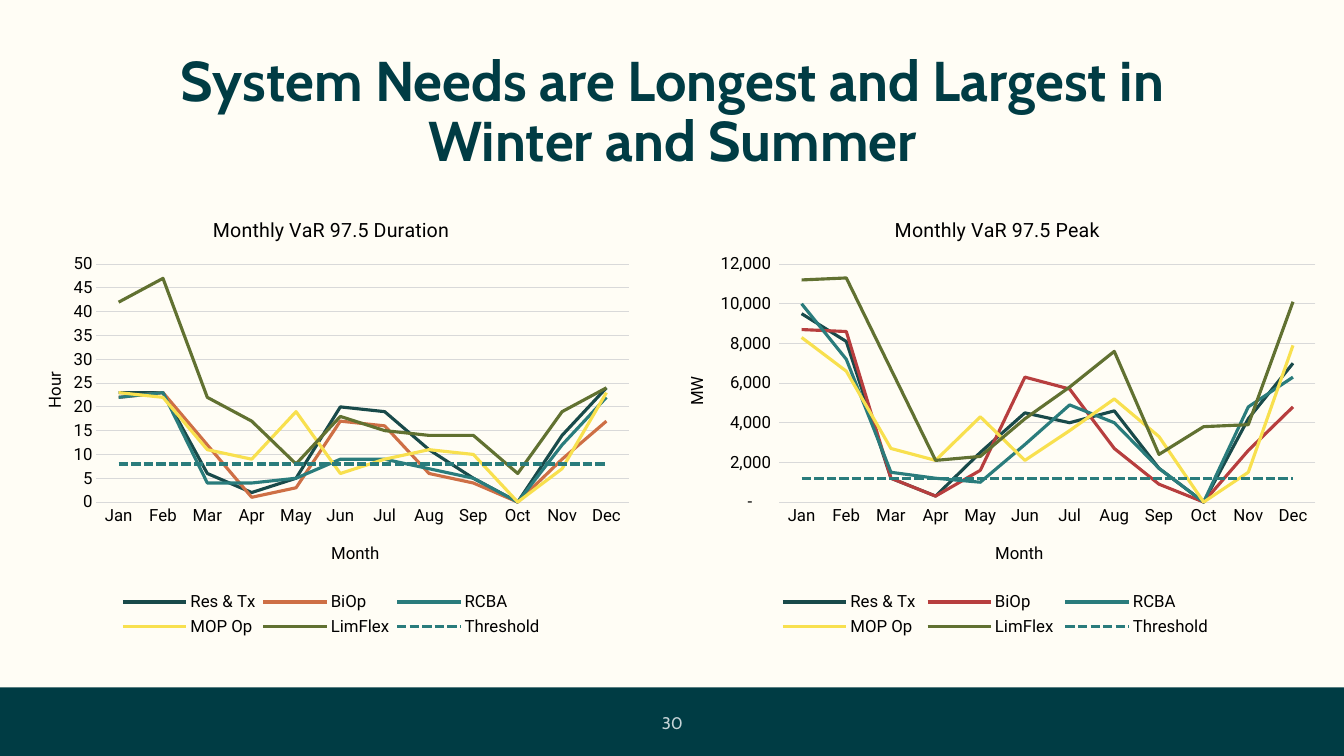
from lxml import etree
from pptx import Presentation
from pptx.chart.data import CategoryChartData
from pptx.dml.color import RGBColor
from pptx.enum.chart import (XL_CHART_TYPE, XL_LEGEND_POSITION, XL_MARKER_STYLE,
                             XL_TICK_MARK)
from pptx.enum.dml import MSO_LINE
from pptx.enum.shapes import MSO_SHAPE
from pptx.enum.text import MSO_ANCHOR, PP_ALIGN
from pptx.oxml.ns import qn
from pptx.util import Inches, Pt

LINE_CHART = XL_CHART_TYPE.LINE
BOTTOM = XL_LEGEND_POSITION.BOTTOM
NO_MARKER = XL_MARKER_STYLE.NONE
NO_TICK = XL_TICK_MARK.NONE
DASH = MSO_LINE.SQUARE_DOT
RECT = MSO_SHAPE.RECTANGLE
MIDDLE = MSO_ANCHOR.MIDDLE
CENTER = PP_ALIGN.CENTER

CREAM, TEAL, GRID, BLACK = "FFFDF5", "003C44", "D9D9D9", "000000"
MONTHS = "Jan Feb Mar Apr May Jun Jul Aug Sep Oct Nov Dec".split()
SERIES_COLORS = {"Res & Tx": "194A4A", "BiOp": "CE6F45", "RCBA": "2A7C7C",
                 "MOP Op": "F8E04E", "LimFlex": "617131", "Threshold": "2A7C7C"}

DURATION = {
    "title": "Monthly VaR 97.5 Duration", "unit": "Hour",
    "top": 50, "step": 5, "format": "General", "colors": SERIES_COLORS,
    "values": [
        [23, 23, 6, 2, 5, 20, 19, 11, 5, 0, 14, 24],
        [22, 23, 12, 1, 3, 17, 16, 6, 4, 0, 9, 17],
        [22, 23, 4, 4, 5, 9, 9, 7, 5, 0, 12, 22],
        [23, 22, 11, 9, 19, 6, 9, 11, 10, 0, 7, 23],
        [42, 47, 22, 17, 8, 18, 15, 14, 14, 6, 19, 24],
        [8] * 12],
    "title_at": (0.31, 0.04), "unit_at": (0.04, 0.39),
    "plot_at": (0.13, 0.156, 0.85, 0.533), "legend_at": (0.16, 0.88, 0.69, 0.12)}
PEAK = {
    "title": "Monthly VaR 97.5 Peak", "unit": "MW",
    "top": 12000, "step": 2000,
    "format": '_(* #,##0_);_(* \\(#,##0\\);_(* "-"??_);_(@_)',
    "colors": {**SERIES_COLORS, "BiOp": "B73E3E"},
    "values": [
        [9500, 8100, 1200, 300, 2500, 4500, 4000, 4600, 1700, 0, 4200, 7000],
        [8700, 8600, 1200, 300, 1600, 6300, 5700, 2700, 900, 0, 2600, 4800],
        [10000, 7200, 1500, 1200, 1000, 2900, 4900, 4000, 1700, 0, 4800, 6300],
        [8300, 6600, 2700, 2100, 4300, 2100, 3600, 5200, 3300, 0, 1500, 7900],
        [11200, 11300, 6700, 2100, 2300, 4200, 5800, 7600, 2400, 3800, 3900, 10100],
        [1200] * 12],
    "title_at": (0.35, 0.04), "unit_at": (0.04, 0.4),
    "plot_at": (0.184, 0.156, 0.796, 0.533), "legend_at": (0.18, 0.88, 0.65, 0.12)}


def rgb(color):
    return RGBColor.from_string(color)


def set_font(font, size, color=BLACK, name="Roboto", bold=False):
    font.size, font.name, font.bold = Pt(size), name, bold
    font.color.rgb = rgb(color)


def write(tf, text, spacing=None, **fmt):
    p = tf.paragraphs[0]
    p.alignment = CENTER
    if spacing:
        p.line_spacing = spacing
    r = p.add_run()
    r.text = text
    set_font(r.font, **fmt)
    return r


def add_text(slide, box, text, **fmt):
    tf = slide.shapes.add_textbox(*map(Inches, box)).text_frame
    tf.word_wrap = True
    tf.vertical_anchor = MIDDLE
    return tf, write(tf, text, **fmt)


def place(element, index, fractions, inner=False):
    """Give a chart part a manual layout in fractions of the chart."""
    for old in element.findall(qn("c:layout")):
        element.remove(old)
    layout = etree.Element(qn("c:layout"))
    manual = etree.SubElement(layout, qn("c:manualLayout"))
    settings = [("layoutTarget", "inner")] if inner else []
    settings += [("xMode", "edge"), ("yMode", "edge")]
    settings += zip("xywh", fractions)
    for tag, value in settings:
        etree.SubElement(manual, qn("c:" + tag)).set("val", str(value))
    element.insert(index, layout)


def add_line_chart(slide, box, info):
    data = CategoryChartData(number_format=info["format"])
    data.categories = MONTHS
    for name, values in zip(info["colors"], info["values"]):
        data.add_series(name, values)
    chart = slide.shapes.add_chart(LINE_CHART, *map(Inches, box), data).chart
    set_font(chart.font, 12)

    # Lines
    for series, color in zip(chart.plots[0].series, info["colors"].values()):
        series.smooth = False
        series.marker.style = NO_MARKER
        series.format.line.width = Pt(2.25)
        series.format.line.color.rgb = rgb(color)
        if series.name == "Threshold":
            series.format.line.dash_style = DASH

    # Axes
    months, scale = chart.category_axis, chart.value_axis
    for axis in (months, scale):
        axis.major_tick_mark = axis.minor_tick_mark = NO_TICK
        set_font(axis.tick_labels.font, 12)
    scale.minimum_scale, scale.maximum_scale = 0, info["top"]
    scale.major_unit = info["step"]
    scale.tick_labels.number_format = info["format"]
    scale.tick_labels.number_format_is_linked = False
    scale.format.line.fill.background()
    for line in (months.format.line, scale.major_gridlines.format.line):
        line.width = Pt(0.75)
        line.color.rgb = rgb(GRID)

    # Titles
    chart.has_title = True
    for title, text, size, at in (
            (chart.chart_title, info["title"], 14, info["title_at"]),
            (months.axis_title, "Month", 12, (0.5, 0.77)),
            (scale.axis_title, info["unit"], 12, info["unit_at"])):
        write(title.text_frame, text, size=size)
        place(title._element, 1, at)
    scale.axis_title.text_frame._txBody.bodyPr.set("rot", "-5400000")

    # Legend and plot area
    chart.has_legend = True
    chart.legend.position = BOTTOM
    chart.legend.include_in_layout = False
    set_font(chart.legend.font, 12)
    place(chart.legend._element, 1, info["legend_at"])
    place(chart._chartSpace.chart.plotArea, 0, info["plot_at"], inner=True)


def add_footer(slide, box, number):
    left, top, width, height = box
    sp = slide.shapes.add_shape(RECT, *map(Inches, box))
    sp.shadow.inherit = False
    sp.fill.solid()
    sp.fill.fore_color.rgb = rgb(TEAL)
    sp.line.fill.background()
    tf, r = add_text(slide, (left + 6.32, top + 0.14, 0.6, 0.43), number,
                     size=12, color="F9FBFD", name="Cabin")
    tf.margin_right = 0
    tf.margin_top = tf.margin_bottom = Inches(0.1)
    color = r._r.find(".//" + qn("a:srgbClr"))
    etree.SubElement(color, qn("a:alpha")).set("val", "80000")


def build_slide(prs):
    slide = prs.slides.add_slide(prs.slide_layouts[6])
    slide.background.fill.solid()
    slide.background.fill.fore_color.rgb = rgb(CREAM)
    add_footer(slide, (0, 6.82, 13.33, 0.68), "30")
    add_text(slide, (0.92, 0.4, 11.5, 1.45),
             "System Needs are Longest and Largest in Winter and Summer",
             spacing=0.9, size=40, color=TEAL, name="Cabin", bold=True)
    add_line_chart(slide, (0.15, 1.93, 6.21, 4.43), DURATION)
    add_line_chart(slide, (6.5, 1.93, 6.68, 4.43), PEAK)


def main():
    prs = Presentation()
    prs.slide_width, prs.slide_height = Inches(13.33), Inches(7.5)
    build_slide(prs)
    prs.save("out.pptx")


if __name__ == "__main__":
    main()
